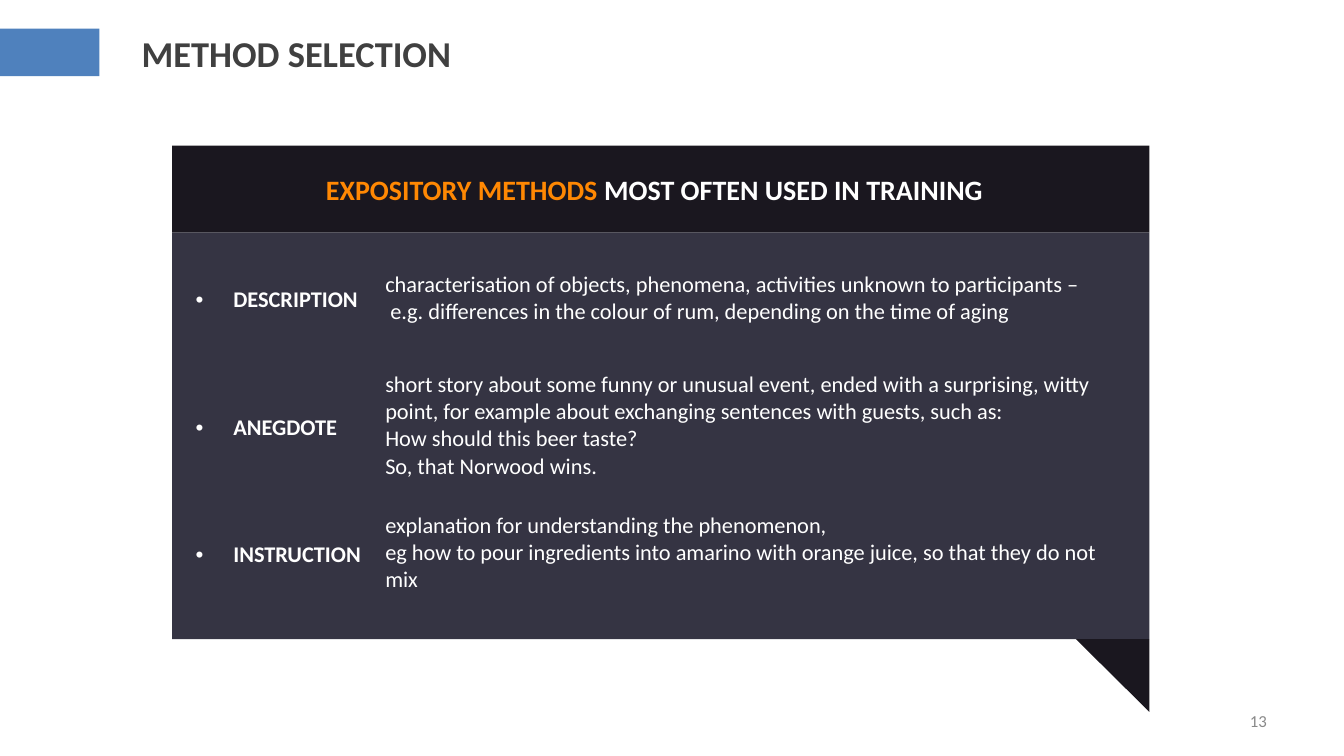
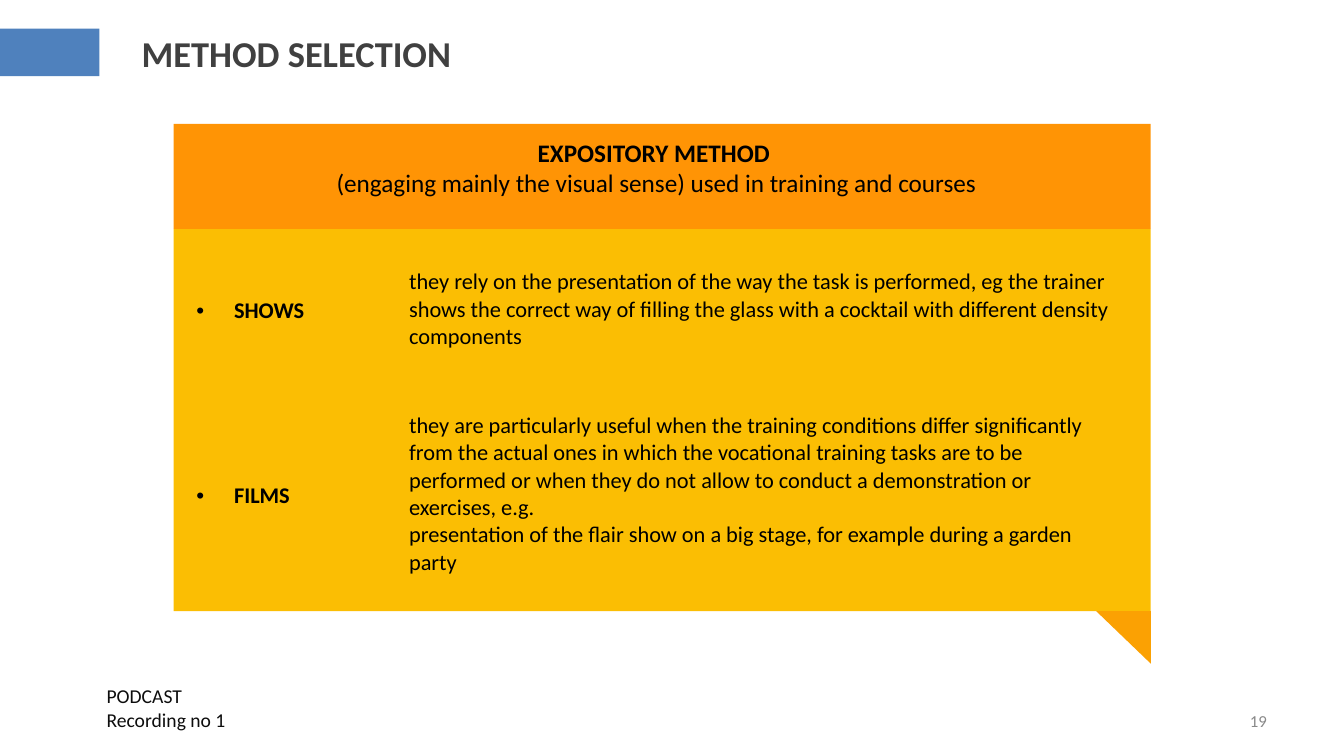
from lxml import etree
from pptx import Presentation
from pptx import util as u
from pptx.dml.color import RGBColor
from pptx.enum import shapes, text
from pptx.oxml.ns import qn

# Colours
BLUE = RGBColor(0x4F, 0x81, 0xBD)
TITLE_GREY = RGBColor(0x40, 0x40, 0x40)
NUMBER_GREY = RGBColor(0x89, 0x89, 0x89)
NIGHT = RGBColor(0x1A, 0x17, 0x1F)
SLATE = RGBColor(0x35, 0x34, 0x43)
ORANGE = RGBColor(0xFF, 0x94, 0x05)
DEEP_ORANGE = RGBColor(0xFF, 0x88, 0x03)
AMBER = RGBColor(0xFB, 0xA1, 0x03)
YELLOW = RGBColor(0xFB, 0xBE, 0x03)
WHITE = RGBColor(0xFF, 0xFF, 0xFF)
BLACK = RGBColor(0, 0, 0)
INK = RGBColor(0x0D, 0x0D, 0x0D)

PLAIN_TABLE = "{2D5ABB26-0587-4C30-8999-92F81FD0307C}"
MIDDLE = text.MSO_ANCHOR.MIDDLE
CENTER, RIGHT = text.PP_ALIGN.CENTER, text.PP_ALIGN.RIGHT


class Deck:
    """Holds the shared style and the current slide."""

    font = "Calibri"
    title = "METHOD SELECTION"
    indent = 27
    panel_width = 698

    def __init__(self):
        self.prs = Presentation()
        self.prs.slide_width, self.prs.slide_height = u.Pt(960), u.Pt(540)
        self.s = None

    def slide(self, number):
        self.s = self.prs.slides.add_slide(self.prs.slide_layouts[6])
        self.shape(shapes.MSO_SHAPE.RECTANGLE, (0, 20.5, 71, 34), BLUE)
        self.text((94, 15, 669, 45), [[(self.title, {"bold": True})]],
                  {"size": u.Pt(26)}, TITLE_GREY, anchor=MIDDLE)
        self.text((688, 500.5, 224, 29), [[(str(number), {})]],
                  {"size": u.Pt(12)}, NUMBER_GREY, RIGHT, MIDDLE)

    def shape(self, kind, box, color, rotation=0):
        sp = self.s.shapes.add_shape(kind, *map(u.Pt, box))
        sp.shadow.inherit = False
        sp.fill.solid()
        sp.fill.fore_color.rgb = color
        sp.line.fill.background()
        sp.rotation = rotation

    def paragraphs(self, tf, lines, style, color, align=None):
        """Each line is a list of (words, format) runs."""
        for i, runs in enumerate(lines):
            p = tf.paragraphs[0] if i == 0 else tf.add_paragraph()
            p.alignment = align
            for words, extra in runs:
                r = p.add_run()
                r.text = words
                values = {"name": self.font, "bold": False, **style, **extra}
                r.font.color.rgb = values.pop("color", color)
                for name, value in values.items():
                    setattr(r.font, name, value)

    def text(self, box, lines, style, color, align=None, anchor=None):
        tf = self.s.shapes.add_textbox(*map(u.Pt, box)).text_frame
        tf.word_wrap = True
        tf.vertical_anchor = anchor
        self.paragraphs(tf, lines, style, color, align)

    def panel(self, left, top, split, bottom, fold, colors):
        """Header band, body and the folded corner below its right edge."""
        head, body, corner = colors
        w, (fold_w, fold_h) = self.panel_width, fold
        rect = shapes.MSO_SHAPE.RECTANGLE
        self.shape(rect, (left, split, w, bottom - split), body)
        self.shape(rect, (left, top, w, split - top), head)
        self.shape(shapes.MSO_SHAPE.RIGHT_TRIANGLE,
                   (left + w - fold_w, bottom, fold_w, fold_h), corner, 180)

    def bullet(self, p):
        pPr = p._p.get_or_add_pPr()
        pPr.set("marL", str(u.Pt(self.indent)))
        pPr.set("indent", str(-u.Pt(self.indent)))
        etree.SubElement(pPr, qn("a:buFont"), typeface="Arial")
        etree.SubElement(pPr, qn("a:buChar"), char="•")
        p.line_spacing, p.space_after = 1.14, u.Pt(6)

    def table(self, left, top, widths, heights, rows, color):
        """Each row is a bulleted term and the paragraphs explaining it."""
        box = left, top, sum(widths), sum(heights)
        table = self.s.shapes.add_table(len(rows), 2, *map(u.Pt, box)).table
        table.first_row = table.horz_banding = False
        table._tbl.tblPr.find(qn("a:tableStyleId")).text = PLAIN_TABLE
        for column, width in zip(table.columns, widths):
            column.width = u.Pt(width)
        style = {"size": u.Pt(16)}
        for row, height, (term, lines) in zip(table.rows, heights, rows):
            row.height = u.Pt(height)
            for cell in row.cells:
                cell.fill.background()
                cell.vertical_anchor = MIDDLE
            name, details = (cell.text_frame for cell in row.cells)
            self.bullet(name.paragraphs[0])
            self.paragraphs(name, [[(term, {"bold": True})]], style, color)
            self.paragraphs(details, [[(line, {})] for line in lines],
                            style, color)


def main():
    deck = Deck()

    # Methods most often used
    deck.slide(13)
    deck.panel(123, 104, 166, 456.5, (52.5, 52), (NIGHT, SLATE, NIGHT))
    deck.text((136, 119.5, 663, 55),
              [[("EXPOSITORY METHODS ", {"color": DEEP_ORANGE}),
                ("MOST OFTEN USED IN TRAINING", {})]],
              {"size": u.Pt(20), "bold": True}, WHITE, CENTER)
    deck.table(132.5, 173.5, (135.5, 540.5), (79, 103, 79), [
        ("DESCRIPTION", [
            "characterisation of objects, phenomena, activities unknown to "
            "participants –",
            " e.g. differences in the colour of rum, depending on the time "
            "of aging"]),
        ("ANEGDOTE", [
            "short story about some funny or unusual event, ended with a "
            "surprising, witty point, for example about exchanging sentences "
            "with guests, such as:",
            "How should this beer taste?",
            "So, that Norwood wins."]),
        ("INSTRUCTION", [
            "explanation for understanding the phenomenon,",
            "eg how to pour ingredients into amarino with orange juice, so "
            "that they do not mix"]),
    ], WHITE)

    # Visual methods
    deck.slide(19)
    deck.text((69, 485, 104, 41),
              [[("PODCAST", {})], [("Recording no 1", {})]],
              {"size": u.Pt(14)}, INK)
    deck.panel(124, 88.5, 163.5, 436.5, (39, 37.5), (ORANGE, YELLOW, AMBER))
    deck.text((137.5, 94.5, 663, 51),
              [[("EXPOSITORY METHOD ", {"bold": True})],
               [("(engaging mainly the visual sense) used in training and "
                 "courses", {})]],
              {"size": u.Pt(18)}, BLACK, CENTER)
    deck.table(133, 170, (152, 515), (102, 162), [
        ("SHOWS", [
            "they rely on the presentation of the way the task is performed, "
            "eg the trainer shows the correct way of filling the glass with "
            "a cocktail with different density components"]),
        ("FILMS", [
            "they are particularly useful when the training conditions "
            "differ significantly from the actual ones in which the "
            "vocational training tasks are to be performed or when they do "
            "not allow to conduct a demonstration or exercises, e.g.",
            "presentation of the flair show on a big stage, for example "
            "during a garden party"]),
    ], BLACK)

    deck.prs.save("out.pptx")


if __name__ == "__main__":
    main()
